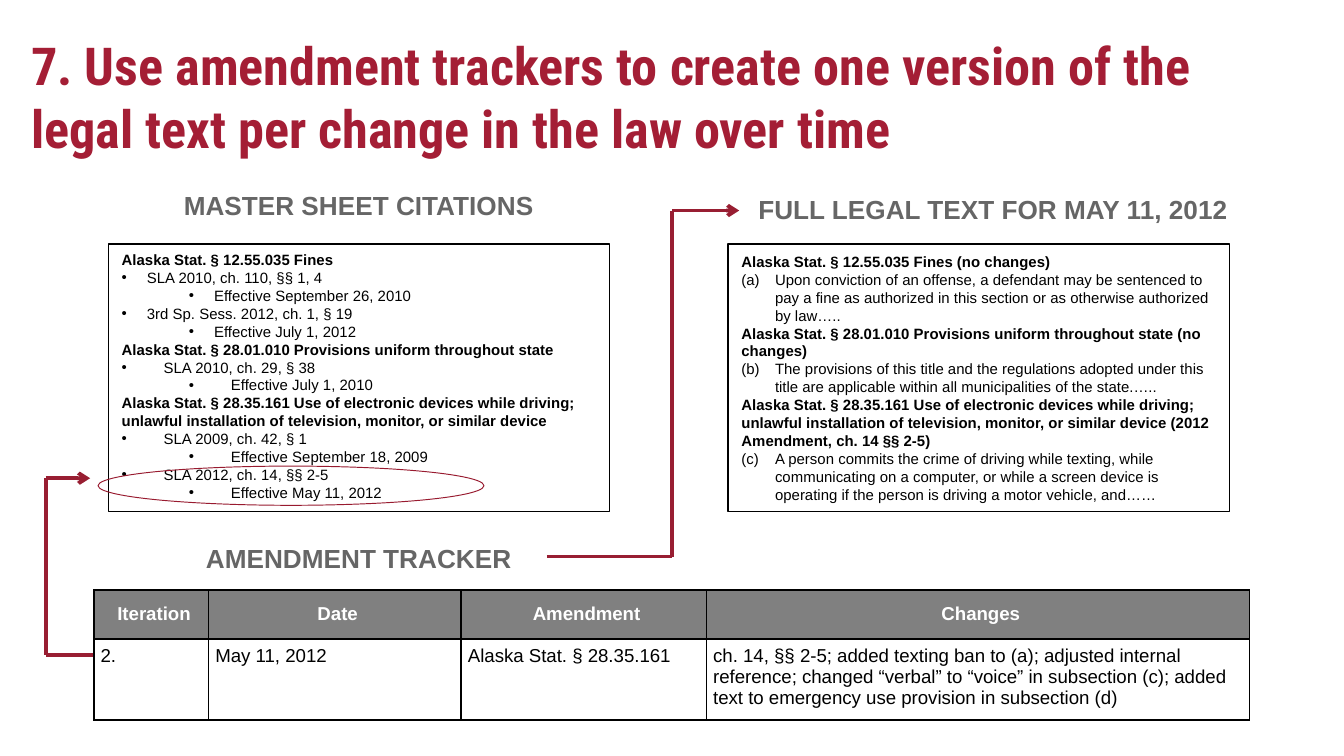
from pptx import Presentation
from pptx import util as u
from pptx.dml.color import RGBColor
from pptx.enum import shapes, text
from pptx.oxml.ns import qn
from lxml import etree

Pt = u.Pt
COLORS = {"title": "A41E35", "heading": "666666", "text": "000000", "white": "FFFFFF",
          "header": "808080", "arrow": "981E32", "oval": "981A2F"}
TOP, LEFT = text.MSO_ANCHOR.TOP, text.PP_ALIGN.LEFT
CENTER = text.PP_ALIGN.CENTER

# Each entry: text, style (head, bullet, sub or letter), hanging indent
CITATIONS = [
    ("Alaska Stat. § 12.55.035 Fines", "head", 0),
    ("SLA 2010, ch. 110, §§ 1, 4", "bullet", 13.5),
    ("Effective September 26, 2010", "sub", 13.5),
    ("3rd Sp. Sess. 2012, ch. 1, § 19", "bullet", 13.5),
    ("Effective July 1, 2012", "sub", 13.5),
    ("Alaska Stat. § 28.01.010 Provisions uniform throughout state", "head", 0),
    ("SLA 2010, ch. 29, § 38", "bullet", 22.5),
    ("Effective July 1, 2010", "sub", 22.5),
    ("Alaska Stat. § 28.35.161 Use of electronic devices while driving; "
     "unlawful installation of television, monitor, or similar device", "head", 0),
    ("SLA 2009, ch. 42, § 1", "bullet", 22.5),
    ("Effective September 18, 2009", "sub", 22.5),
    ("SLA 2012, ch. 14, §§ 2-5", "bullet", 22.5),
    ("Effective May 11, 2012", "sub", 22.5),
]
LEGAL_TEXT = [
    ("Alaska Stat. § 12.55.035 Fines (no changes)", "head", 0),
    ("Upon conviction of an offense, a defendant may be sentenced to pay a fine as "
     "authorized in this section or as otherwise authorized by law…..", "letter", 18),
    ("Alaska Stat. § 28.01.010 Provisions uniform throughout state (no changes)", "head", 0),
    ("The provisions of this title and the regulations adopted under this title are "
     "applicable within all municipalities of the state.…..", "letter", 18),
    ("Alaska Stat. § 28.35.161 Use of electronic devices while driving; unlawful "
     "installation of television, monitor, or similar device (2012 Amendment, "
     "ch. 14 §§ 2-5)", "head", 0),
    ("A person commits the crime of driving while texting, while communicating on a "
     "computer, or while a screen device is operating if the person is driving a motor "
     "vehicle, and……", "letter", 18),
]
TRACKER = [
    ["Iteration", "Date", "Amendment", "Changes"],
    ["2.", "May 11, 2012", "Alaska Stat. § 28.35.161",
     "ch. 14, §§ 2-5; added texting ban to (a); adjusted internal reference; changed "
     "“verbal” to “voice” in subsection (c); added text to emergency use provision in "
     "subsection (d)"],
]


def rgb(name):
    return RGBColor.from_string(COLORS[name])


def set_attrs(obj, values):
    for name, value in values.items():
        setattr(obj, name, value)


def place(sp, left, top, width, height):
    set_attrs(sp, {"left": Pt(left), "top": Pt(top), "width": Pt(width), "height": Pt(height)})


def add_run(p, words, size, color, bold, font="Arial"):
    r = p.add_run()
    r.text = words
    set_attrs(r.font, {"size": Pt(size), "bold": bold, "name": font})
    r.font.color.rgb = rgb(color)


def set_line(line, color, width):
    line.color.rgb = rgb(color)
    line.width = Pt(width)


def add_title(s, words):
    sp = s.shapes.title
    place(sp, 9.6, 10.6, 659.5, 45.4)
    tf = sp.text_frame
    set_attrs(tf, {"word_wrap": True, "auto_size": text.MSO_AUTO_SIZE.NONE,
                   "vertical_anchor": TOP, "margin_left": Pt(7.2), "margin_right": Pt(7.2),
                   "margin_top": Pt(7.2), "margin_bottom": Pt(7.2)})
    tf.paragraphs[0].alignment = LEFT
    add_run(tf.paragraphs[0], words, 28, "title", True, "Roboto Condensed")


def set_marker(p, style, hang, number):
    start = 36 if style == "sub" else 0
    pPr = p._p.get_or_add_pPr()
    pPr.set("marL", str(Pt(start + hang)))
    pPr.set("indent", str(-Pt(hang)))
    if style == "head":
        etree.SubElement(pPr, qn("a:buNone"))
    elif style == "letter":
        etree.SubElement(pPr, qn("a:buFont"), typeface="Arial")
        etree.SubElement(pPr, qn("a:buAutoNum"), type="alphaLcParenBoth", startAt=str(number))
    else:
        etree.SubElement(pPr, qn("a:buFont"), typeface="Arial")
        etree.SubElement(pPr, qn("a:buChar"), char="•")


def add_list(sp, left, entries, anchor):
    place(sp, left, 130.8, 268.6, 143.3)
    set_line(sp.line, "text", 0.75)
    tf = sp.text_frame
    set_attrs(tf, {"word_wrap": True, "auto_size": text.MSO_AUTO_SIZE.NONE,
                   "vertical_anchor": anchor})
    number = 0
    for i, (words, style, hang) in enumerate(entries):
        p = tf.add_paragraph() if i else tf.paragraphs[0]
        set_attrs(p, {"level": int(style == "sub"), "alignment": LEFT,
                      "space_before": Pt(0), "space_after": Pt(0)})
        number += style == "letter"
        set_marker(p, style, hang, number)
        add_run(p, words, 8, "text", style == "head")


def add_heading(s, words, left, top, width):
    tf = s.shapes.add_textbox(Pt(left), Pt(top), Pt(width), Pt(24.2)).text_frame
    tf.word_wrap = False
    tf.paragraphs[0].alignment = CENTER
    add_run(tf.paragraphs[0], words, 14, "heading", True)


def add_oval(s, left, top, width, height):
    sp = s.shapes.add_shape(shapes.MSO_SHAPE.OVAL, Pt(left), Pt(top), Pt(width), Pt(height))
    sp.shadow.inherit = False
    sp.fill.background()
    set_line(sp.line, "oval", 0.5)


def add_route(s, points):
    """Join the points by straight lines, with an arrowhead on the last."""
    for start, end in zip(points, points[1:]):
        c = s.shapes.add_connector(shapes.MSO_CONNECTOR.STRAIGHT, *map(Pt, start + end))
        set_line(c.line, "arrow", 2)
        if end == points[-1]:
            etree.SubElement(c.line._get_or_add_ln(), qn("a:tailEnd"), type="arrow")
        etree.SubElement(c._element.spPr, qn("a:effectLst"))


def add_borders(cell):
    tcPr = cell._tc.get_or_add_tcPr()
    for i, side in enumerate(("lnL", "lnR", "lnT", "lnB")):
        ln = etree.Element(qn("a:" + side), w=str(Pt(1)))
        fill = etree.SubElement(ln, qn("a:solidFill"))
        etree.SubElement(fill, qn("a:srgbClr"), val=COLORS["text"])
        tcPr.insert(i, ln)


def add_tracker(s, rows, widths, heights):
    table = s.shapes.add_table(len(rows), len(widths), Pt(50.3), Pt(316),
                               Pt(sum(widths)), Pt(sum(heights))).table
    for column, width in zip(table.columns, widths):
        column.width = Pt(width)
    for i, row in enumerate(rows):
        table.rows[i].height = Pt(heights[i])
        header = i == 0
        margin = Pt(7.2 if header else 3.6)
        for j, words in enumerate(row):
            cell = table.cell(i, j)
            set_attrs(cell, {"margin_left": margin, "margin_top": margin,
                             "margin_right": Pt(4.3) if header else margin,
                             "margin_bottom": margin, "vertical_anchor": TOP})
            cell.fill.solid()
            cell.fill.fore_color.rgb = rgb("header" if header else "white")
            add_borders(cell)
            p = cell.text_frame.paragraphs[0]
            p.alignment = CENTER if header else LEFT
            add_run(p, words, 10, "white" if header else "text", header)


def main():
    prs = Presentation()
    set_attrs(prs, {"slide_width": Pt(720), "slide_height": Pt(405)})
    s = prs.slides.add_slide(prs.slide_layouts[3])

    # Title and the two lists
    add_title(s, "7. Use amendment trackers to create one version of the legal text "
                 "per change in the law over time")
    add_list(s.placeholders[1], 58, CITATIONS, TOP)
    add_list(s.placeholders[2], 390, LEGAL_TEXT, text.MSO_ANCHOR.MIDDLE)

    # Section headings
    add_heading(s, "MASTER SHEET CITATIONS", 77.2, 98, 230)
    add_heading(s, "FULL LEGAL TEXT FOR MAY 11, 2012", 390.2, 100, 283.7)
    add_heading(s, "AMENDMENT TRACKER", 92.2, 286.8, 200)

    # Highlighted citation, tracker table and routes
    add_oval(s, 52.5, 249.7, 206.8, 21)
    add_tracker(s, TRACKER, [61.5, 135.3, 131.4, 291], [26, 43])
    add_route(s, [(293, 298.2), (360, 298.2), (360, 112.8), (396, 112.8)])
    add_route(s, [(49.7, 350.8), (24.5, 350.8), (24.5, 256.2), (48.3, 256.2)])

    prs.save("out.pptx")


if __name__ == "__main__":
    main()
